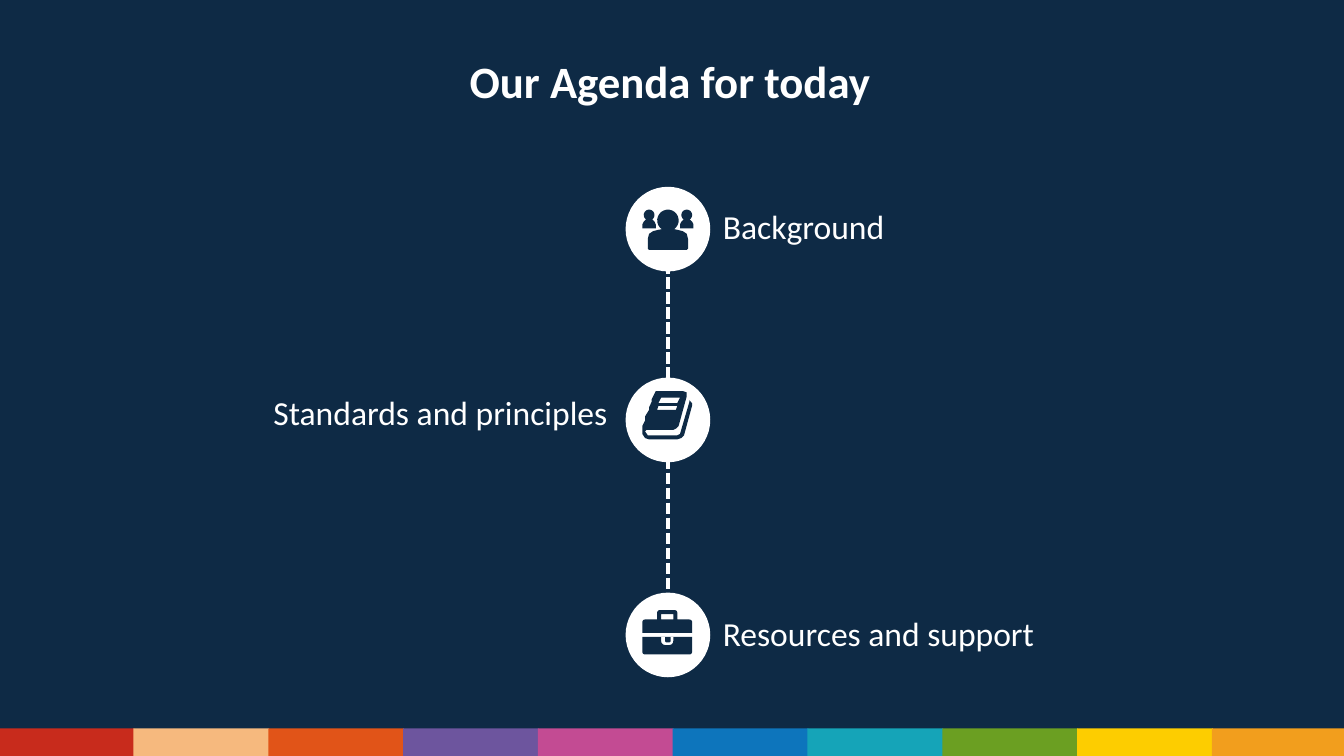
from dataclasses import dataclass
from math import cos, radians, sin

from lxml.etree import SubElement
from pptx import Presentation
from pptx.dml.color import RGBColor
from pptx.enum.dml import MSO_LINE
from pptx.enum.shapes import MSO_CONNECTOR as Connector, MSO_SHAPE as Shape
from pptx.enum.text import MSO_ANCHOR as Anchor, MSO_AUTO_SIZE as AutoSize, PP_ALIGN as Align
from pptx.oxml.ns import qn
from pptx.util import Inches, Pt

Point = tuple[float, float]
Contour = list[Point]

COLORS = {"navy": "0E2A45", "white": "FFFFFF"}
BANDS = {
    "red": "C82B1C", "peach": "F6B97E", "orange": "E15418", "purple": "6D559E",
    "pink": "C34B93", "blue": "0D75BC", "teal": "15A4B8", "green": "6B9F22",
    "yellow": "FDCD00", "amber": "F29E1D",
}
BAND_LEFT, BAND_TOP, BAND_HEIGHT = -0.01, 5.42, 0.22
BAND_STEP = 10.03 / len(BANDS)
CENTER, DIAMETER = 4.97, 0.63
LABEL_WIDTH, LABEL_HEIGHT = 2.97, 0.4


@dataclass
class AgendaItem:
    text: str
    circle_top: float
    label_left: float
    label_top: float
    align: Align
    icon: list[Contour]


def rgb(color: str) -> RGBColor:
    return RGBColor.from_string(color)


def arc(x: float, y: float, radius: float, start: int, end: int) -> Contour:
    """Points along a circular arc, clockwise from the right, in degrees."""
    steps = max(abs(end - start) // 15, 2)
    angles = [radians(start + (end - start) * i / steps) for i in range(steps + 1)]
    return [(x + radius * cos(a), y + radius * sin(a)) for a in angles]


def box(left: float, top: float, right: float, bottom: float,
        upper: float = 0, lower: float = 0) -> Contour:
    """A rectangle with rounded upper and lower corners."""
    return (arc(left + upper, top + upper, upper, 180, 270)
            + arc(right - upper, top + upper, upper, 270, 360)
            + arc(right - lower, bottom - lower, lower, 0, 90)
            + arc(left + lower, bottom - lower, lower, 90, 180))


def person(x: float, y: float, radius: float, half_body: Contour) -> Contour:
    """A round head on a body that is mirrored about x."""
    right = [(x + dx, body_y) for dx, body_y in half_body]
    left = [(x - dx, body_y) for dx, body_y in reversed(half_body)]
    return arc(x, y, radius, 125, 415) + right + left


def set_text(shape, text: str, size: int, align: Align, bold: bool = False,
             anchor: Anchor = Anchor.TOP) -> None:
    frame = shape.text_frame
    frame.word_wrap = True
    frame.vertical_anchor = anchor
    paragraph = frame.paragraphs[0]
    paragraph.alignment = align
    run = paragraph.add_run()
    run.text = text
    run.font.name, run.font.size, run.font.bold = "Calibri", Pt(size), bold
    run.font.color.rgb = rgb(COLORS["white"])


def paint(shape, color: str) -> None:
    shape.shadow.inherit = False
    shape.fill.solid()
    shape.fill.fore_color.rgb = rgb(color)
    shape.line.fill.background()


def add_filled(slide, kind: Shape, left: float, top: float, width: float, height: float,
               color: str):
    shape = slide.shapes.add_shape(
        kind, Inches(left), Inches(top), Inches(width), Inches(height))
    paint(shape, color)
    return shape


def add_icon(slide, contours: list[Contour]) -> None:
    outlines = [[(Inches(x), Inches(y)) for x, y in contour] for contour in contours]
    builder = slide.shapes.build_freeform(*outlines[0][0])
    for i, outline in enumerate(outlines):
        if i:
            builder.move_to(*outline[0])
        builder.add_line_segments(outline[1:], close=True)
    paint(builder.convert_to_shape(), COLORS["navy"])


def add_timeline(slide):
    line = slide.shapes.add_connector(
        Connector.STRAIGHT, Inches(CENTER), Inches(1.84), Inches(CENTER), Inches(4.41))
    line.line.color.rgb = rgb(COLORS["white"])
    line.line.width = Pt(2)
    line.line.dash_style = MSO_LINE.SQUARE_DOT
    SubElement(line._element.spPr, qn("a:effectLst"))
    return line


def add_item(slide, item: AgendaItem):
    label = slide.shapes.add_textbox(
        Inches(item.label_left), Inches(item.label_top),
        Inches(LABEL_WIDTH), Inches(LABEL_HEIGHT))
    set_text(label, item.text, 18, item.align)
    label.text_frame.auto_size = AutoSize.SHAPE_TO_FIT_TEXT
    circle = add_filled(slide, Shape.OVAL, CENTER - DIAMETER / 2, item.circle_top,
                        DIAMETER, DIAMETER, COLORS["white"])
    add_icon(slide, item.icon)
    return circle


# Icon outlines; inner contours cut holes
SIDE_BODY = [(0.03, 1.64), (0.04, 1.65), (0.05, 1.67), (0.05, 1.7)]
MAIN_BODY = [(0.07, 1.71), (0.11, 1.72), (0.14, 1.74), (0.15, 1.78), (0.15, 1.85), (0.14, 1.86)]
PEOPLE = [
    person(4.83, 1.6, 0.04, SIDE_BODY),
    person(CENTER, 1.64, 0.08, MAIN_BODY),
    person(5.11, 1.6, 0.04, SIDE_BODY),
]
BOOK = [
    [(4.9, 2.91), (5.08, 2.91), (5.11, 2.92), (5.11, 2.95), (5.05, 3.17), (5.03, 3.19),
     (5.01, 3.2), (4.81, 3.2), (4.8, 3.21), (4.82, 3.24), (5.04, 3.24), (5.06, 3.23),
     (5.13, 2.99), (5.13, 2.98), (5.15, 3), (5.15, 3.02), (5.09, 3.24), (5.07, 3.26),
     (5.04, 3.27), (4.83, 3.27), (4.8, 3.26), (4.78, 3.23), (4.78, 3.17), (4.8, 3.13),
     (4.8, 3.1), (4.83, 3.05), (4.83, 3.03), (4.85, 2.99), (4.85, 2.97), (4.88, 2.91)],
    [(4.9, 3.02), (5.04, 3.02), (5.03, 3.05), (4.89, 3.05)],
    [(4.92, 2.96), (5.06, 2.96), (5.04, 3), (4.9, 3)],
]
BRIEFCASE = [
    box(4.78, 4.61, 5.15, 4.71, upper=0.02),
    [(4.89, 4.61), *box(4.89, 4.54, 5.04, 4.61, upper=0.02)[:-3], (5.04, 4.61),
     (5.01, 4.61), (5.01, 4.57), (4.92, 4.57), (4.92, 4.61)],
    box(4.78, 4.74, 5.15, 4.87, lower=0.02),
    box(4.92, 4.74, 5.01, 4.8, lower=0.03),
    box(4.95, 4.74, 4.99, 4.78, lower=0.01),
]
ITEMS = [
    AgendaItem("Background", 1.39, 5.28, 1.48, Align.LEFT, PEOPLE),
    AgendaItem("Standards and principles", 2.81, 1.65, 2.87, Align.RIGHT, BOOK),
    AgendaItem("Resources and support", 4.41, 5.28, 4.51, Align.LEFT, BRIEFCASE),
]


def main() -> None:
    presentation = Presentation()
    presentation.slide_width = Inches(10)
    presentation.slide_height = Inches(10 * 9 / 16)
    slide = presentation.slides.add_slide(presentation.slide_layouts[0])
    slide.background.fill.solid()
    slide.background.fill.fore_color.rgb = rgb(COLORS["navy"])

    # Title
    subtitle = slide.placeholders[1]._element
    subtitle.getparent().remove(subtitle)
    title = slide.shapes.title
    title.left, title.top = Inches(0.66), Inches(0.24)
    title.width, title.height = Inches(8.65), Inches(0.72)
    set_text(title, "Our Agenda for today", 24, Align.CENTER, bold=True, anchor=Anchor.MIDDLE)

    # Colour bands along the bottom
    for i, color in enumerate(BANDS.values()):
        add_filled(slide, Shape.RECTANGLE, BAND_LEFT + i * BAND_STEP, BAND_TOP,
                   1.01, BAND_HEIGHT, color)

    # Dashed line behind the agenda items
    timeline = add_timeline(slide)
    circles = [add_item(slide, item) for item in ITEMS]
    timeline.end_connect(circles[-1], 0)

    presentation.save("out.pptx")


if __name__ == "__main__":
    main()
